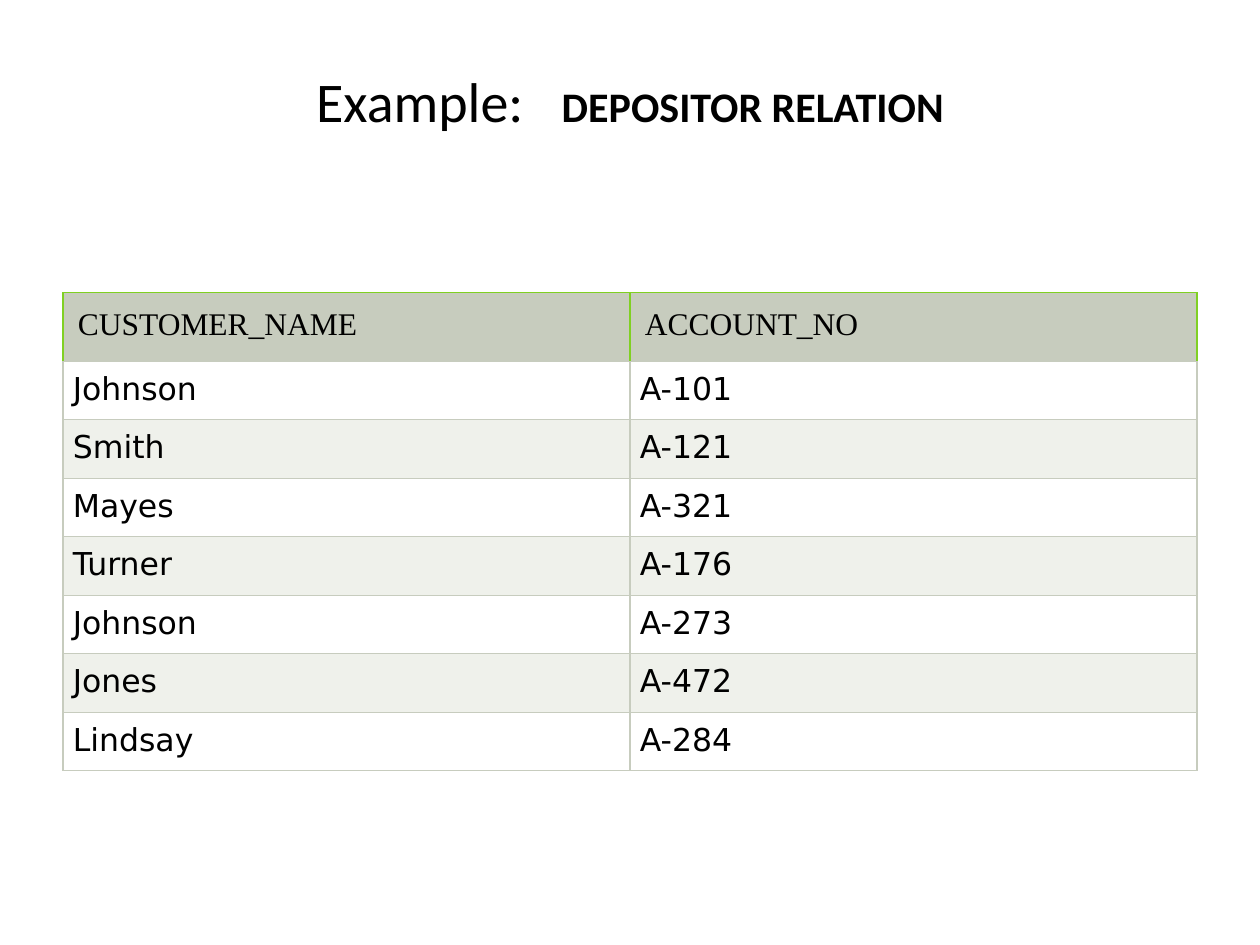
"""Build a slide that shows the depositor relation as a table."""
from lxml import etree
from pptx import Presentation
from pptx.dml.color import RGBColor
from pptx.enum.text import MSO_ANCHOR, PP_ALIGN
from pptx.oxml.ns import qn
from pptx.util import Cm, Pt

CENTER = PP_ALIGN.CENTER
MIDDLE = MSO_ANCHOR.MIDDLE
TOP = MSO_ANCHOR.TOP

BLACK = RGBColor(0x00, 0x00, 0x00)
WHITE = RGBColor(0xFF, 0xFF, 0xFF)
SAGE = RGBColor(0xC7, 0xCC, 0xBE)
PALE_SAGE = RGBColor(0xEF, 0xF1, 0xEB)
GREEN = RGBColor(0x80, 0xD0, 0x23)

TITLE_LABEL = "Example:"
TITLE_NAME = "DEPOSITOR RELATION"
TITLE_GAP_SPACING = 1450
HEADER = ("CUSTOMER_NAME", "ACCOUNT_NO")
DEPOSITORS = [
    ("Johnson", "A-101"),
    ("Smith", "A-121"),
    ("Mayes", "A-321"),
    ("Turner", "A-176"),
    ("Johnson", "A-273"),
    ("Jones", "A-472"),
    ("Lindsay", "A-284"),
]

LEFT, WIDTH = Cm(1.27), Cm(22.86)
TABLE_TOP = Cm(5.9)
HEADER_HEIGHT, ROW_HEIGHT = Cm(1.38), Cm(1.18)
BORDER_WIDTH = Pt(0.75)


def add_title(slide):
    title = slide.shapes.title
    title.left, title.top, title.width, title.height = LEFT, Cm(0.84), WIDTH, Cm(3.18)
    frame = title.text_frame
    frame.word_wrap = True
    frame.vertical_anchor = MIDDLE
    frame.margin_bottom = Cm(0.96)
    paragraph = frame.paragraphs[0]
    paragraph.alignment = CENTER
    paragraph.font.name = "Calibri"
    paragraph.font.color.rgb = BLACK
    for text, size, bold in ((TITLE_LABEL, 32, False), (" ", 32, False), (TITLE_NAME, 24, True)):
        run = paragraph.add_run()
        run.text = text
        run.font.size = Pt(size)
        run.font.bold = bold
        if text == " ":
            run._r.get_or_add_rPr().set("spc", str(TITLE_GAP_SPACING))


def set_borders(cell, side_color, top_color):
    properties = cell._tc.get_or_add_tcPr()
    colors = {"a:lnL": side_color, "a:lnR": side_color, "a:lnT": top_color, "a:lnB": SAGE}
    for tag, color in colors.items():
        line = etree.SubElement(properties, qn(tag), w=str(BORDER_WIDTH))
        fill = etree.SubElement(line, qn("a:solidFill"))
        etree.SubElement(fill, qn("a:srgbClr"), val=str(color))


def fill_cell(cell, text, font_name, margin, color, side_color, top_color):
    set_borders(cell, side_color, top_color)
    cell.fill.solid()
    cell.fill.fore_color.rgb = color
    cell.margin_left = cell.margin_right = cell.margin_top = cell.margin_bottom = margin
    cell.vertical_anchor = TOP
    cell.text = text
    font = cell.text_frame.paragraphs[0].font
    font.name = font_name
    font.size = Pt(18)
    font.bold = False
    font.color.rgb = BLACK


def add_depositor_table(slide):
    rows = [HEADER] + DEPOSITORS
    height = HEADER_HEIGHT + len(DEPOSITORS) * ROW_HEIGHT
    table = slide.shapes.add_table(len(rows), len(HEADER), LEFT, TABLE_TOP, WIDTH, height).table
    for column in table.columns:
        column.width = WIDTH // len(HEADER)
    for row_index, values in enumerate(rows):
        if row_index == 0:
            row_height = HEADER_HEIGHT
            style = ("Times New Roman", Cm(0.3), SAGE, GREEN, GREEN)
        else:
            row_height = ROW_HEIGHT
            band = WHITE if row_index % 2 else PALE_SAGE
            style = ("DejaVu Sans", Cm(0.2), band, SAGE, SAGE)
        table.rows[row_index].height = row_height
        for column_index, text in enumerate(values):
            fill_cell(table.cell(row_index, column_index), text, *style)


def main():
    presentation = Presentation()
    presentation.slide_width, presentation.slide_height = Cm(25.4), Cm(19.05)
    slide = presentation.slides.add_slide(presentation.slide_layouts[5])
    add_title(slide)
    add_depositor_table(slide)
    presentation.save("out.pptx")


if __name__ == "__main__":
    main()
